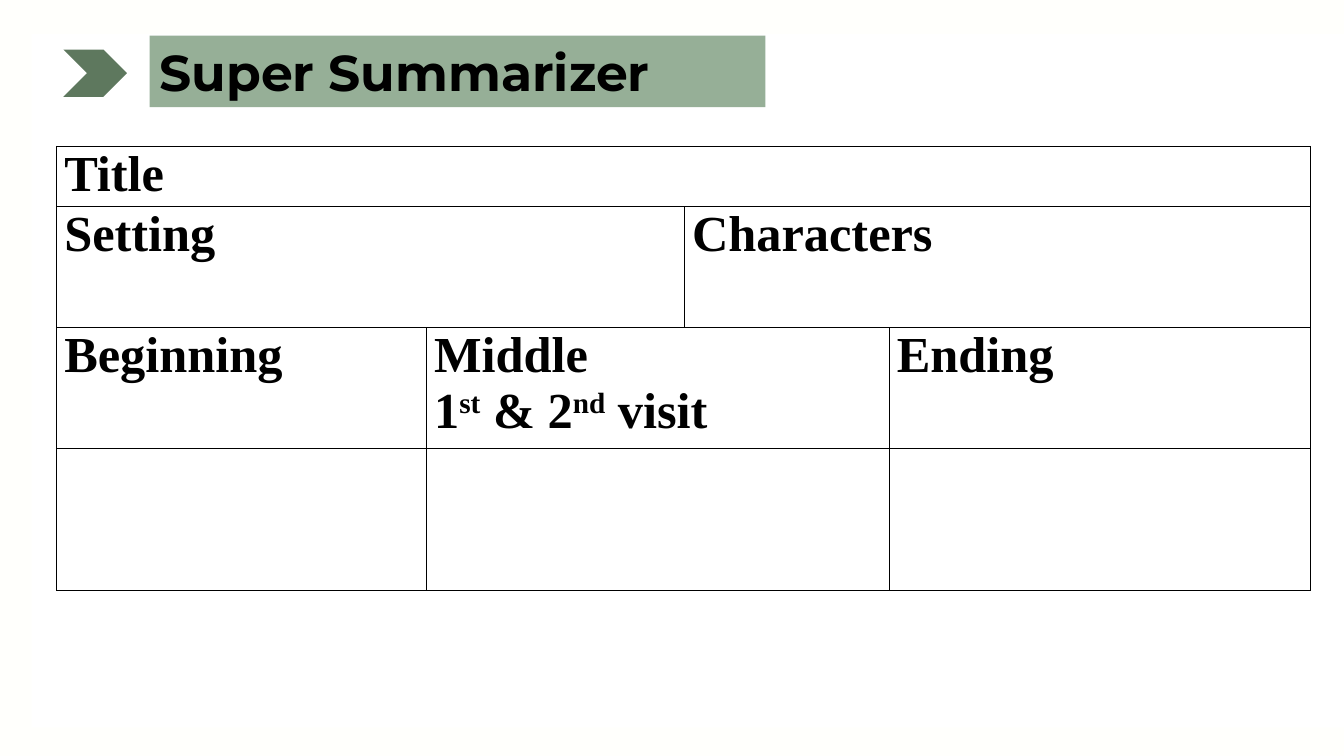
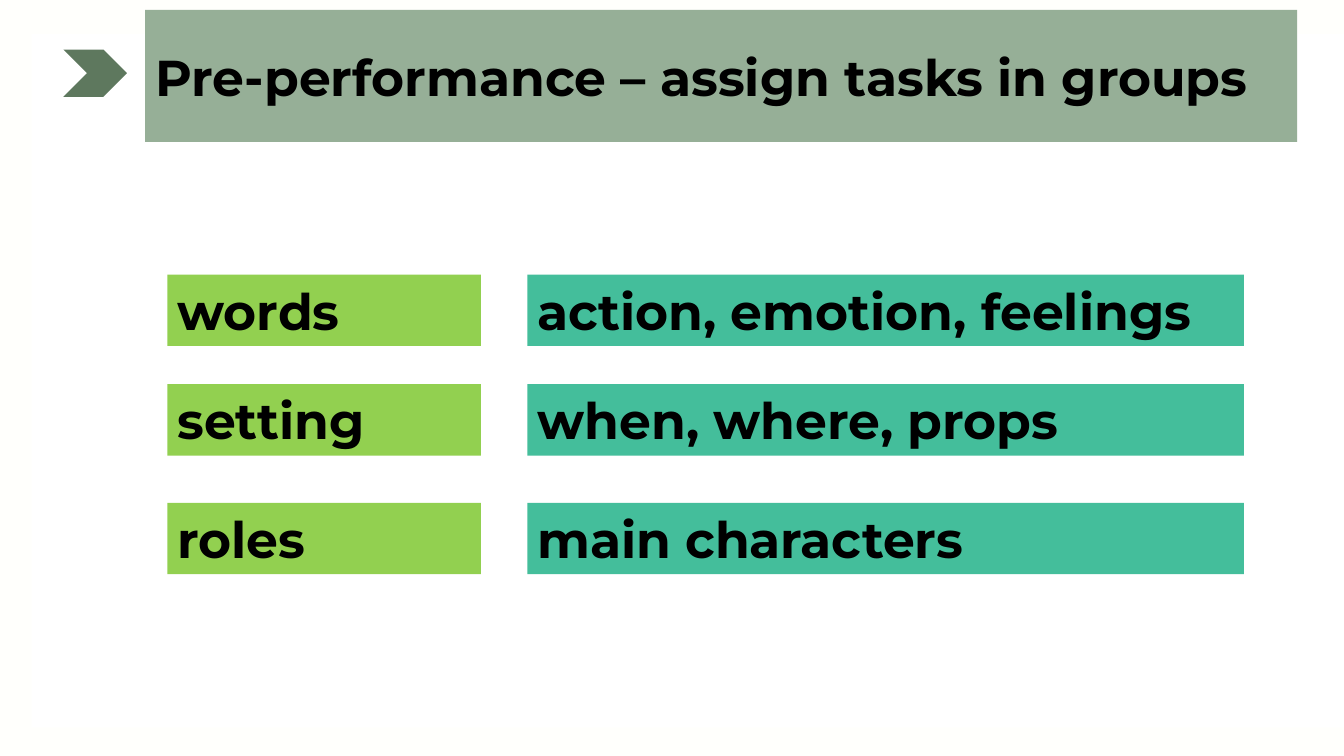
import pptx
import pptx.dml.color
import pptx.enum.shapes
import pptx.enum.text
import pptx.oxml
import pptx.util
from lxml import etree

Cm = pptx.util.Cm
Pt = pptx.util.Pt
Color = pptx.dml.color.RGBColor
Shape = pptx.enum.shapes.MSO_SHAPE
Align = pptx.enum.text.PP_ALIGN
Anchor = pptx.enum.text.MSO_ANCHOR

CREAM = Color(0xFF, 0xFF, 0xFC)
WHITE = Color(0xFF, 0xFF, 0xFF)
BLACK = Color(0, 0, 0)
MOSS = Color(0x5E, 0x78, 0x5E)
SAGE = Color(0x96, 0xAF, 0x97)
LIME = Color(0x92, 0xD0, 0x50)
TEAL = Color(0x44, 0xBE, 0x9B)
SANS = "Montserrat"
SERIF = "Times New Roman"
SIZE = Pt(36)
BAR = 1.8
NS = "http://schemas.openxmlformats.org/drawingml/2006/main"


def style(run, face):
    """Give a run the bold black lettering used throughout."""
    font = run.font
    font.name, font.size, font.bold = face, SIZE, True
    font.color.rgb = BLACK


def block(slide, kind, box, color):
    """Draw a flat filled shape in a box given in centimetres."""
    shape = slide.shapes.add_shape(kind, *map(Cm, box))
    shape.shadow.inherit = False
    shape.fill.solid()
    shape.fill.fore_color.rgb = color
    shape.line.fill.background()
    return shape


def label(slide, text, box, color):
    """Draw a coloured bar with left-aligned text."""
    frame = block(slide, Shape.RECTANGLE, box, color).text_frame
    frame.word_wrap = True
    frame.vertical_anchor = Anchor.MIDDLE
    frame.text = text
    para = frame.paragraphs[0]
    para.alignment = Align.LEFT
    style(para.runs[0], SANS)


def page(deck, title, box):
    """Add a slide with the shared panel, chevron and title band."""
    slide = deck.slides.add_slide(deck.slide_layouts[6])
    fill = slide.background.fill
    fill.solid()
    fill.fore_color.rgb = CREAM
    block(slide, Shape.RECTANGLE, (0.79, 0.86, 33.2, 17.48), WHITE)
    block(slide, Shape.CHEVRON, (1.6, 1.25, 1.6, 1.19), MOSS)
    label(slide, title, box, SAGE)
    return slide


def border(cell):
    """Rule all four sides of a cell in black."""
    props = cell._tc.get_or_add_tcPr()
    for side in ("lnL", "lnR", "lnT", "lnB"):
        line = etree.SubElement(props, f"{{{NS}}}{side}", w=str(Pt(1)))
        fill = etree.SubElement(line, f"{{{NS}}}solidFill")
        etree.SubElement(fill, f"{{{NS}}}srgbClr", val=str(BLACK))


def write(cell, lines):
    """Fill a cell with lines of text; odd-numbered parts are raised."""
    frame = cell.text_frame
    for row, parts in enumerate(lines):
        para = frame.add_paragraph() if row else frame.paragraphs[0]
        para.alignment = Align.JUSTIFY
        for spot, part in enumerate(parts):
            run = para.add_run()
            run.text = part
            style(run, SERIF)
            if spot % 2:
                run._r.get_or_add_rPr().set("baseline", "30000")


def chart(slide, left, top, cols, rows, cells):
    """Draw the story table from (row, first column, last column, lines)."""
    grid = slide.shapes.add_table(
        len(rows), len(cols), Cm(left), Cm(top), Cm(sum(cols)), Cm(sum(rows))
    ).table
    grid.first_row = grid.horz_banding = False
    for col, width in zip(grid.columns, cols):
        col.width = Cm(width)
    for row, height in zip(grid.rows, rows):
        row.height = Cm(height)
    for cell in grid.iter_cells():
        border(cell)
        cell.fill.background()
        cell.margin_left = cell.margin_right = Cm(0.19)
        cell.margin_top = cell.margin_bottom = 0
    for row, first, last, lines in cells:
        cell = grid.cell(row, first)
        if last > first:
            cell.merge(grid.cell(row, last))
        write(cell, lines)


def pairs(slide, left, tops, items):
    """Draw rows of a short task bar and its longer detail bar."""
    for top, (task, detail) in zip(tops, items):
        label(slide, task, (left, top, 7.9, BAR), LIME)
        label(slide, detail, (left + 9.07, top, 18.06, BAR), TEAL)


def main():
    """Build both slides and save the deck."""
    deck = pptx.Presentation()
    deck.slide_width, deck.slide_height = Cm(33.87), Cm(19.05)

    slide = page(deck, "Super Summarizer", (3.77, 0.9, 15.52, BAR))
    cells = [
        (0, 0, 3, [["Title"]]),
        (1, 0, 1, [["Setting"]]),
        (1, 2, 3, [["Characters"]]),
        (2, 0, 0, [["Beginning"]]),
        (2, 1, 2, [["Middle"], ["1", "st", " & 2", "nd", " visit"]]),
        (2, 3, 3, [["Ending"]]),
        (3, 1, 2, []),
    ]
    cols = (9.32, 6.5, 5.16, 10.62)
    rows = (1.52, 3.05, 3.05, 3.57)
    chart(slide, 1.43, 3.69, cols, rows, cells)

    title = "Pre-performance – assign tasks in groups"
    slide = page(deck, title, (3.66, 0.25, 29.03, 3.33))
    items = [
        ("words", "action, emotion, feelings"),
        ("setting", "when, where, props"),
        ("roles", "main characters"),
    ]
    pairs(slide, 4.22, (6.92, 9.68, 12.67), items)
    deck.save("out.pptx")


if __name__ == "__main__":
    main()
